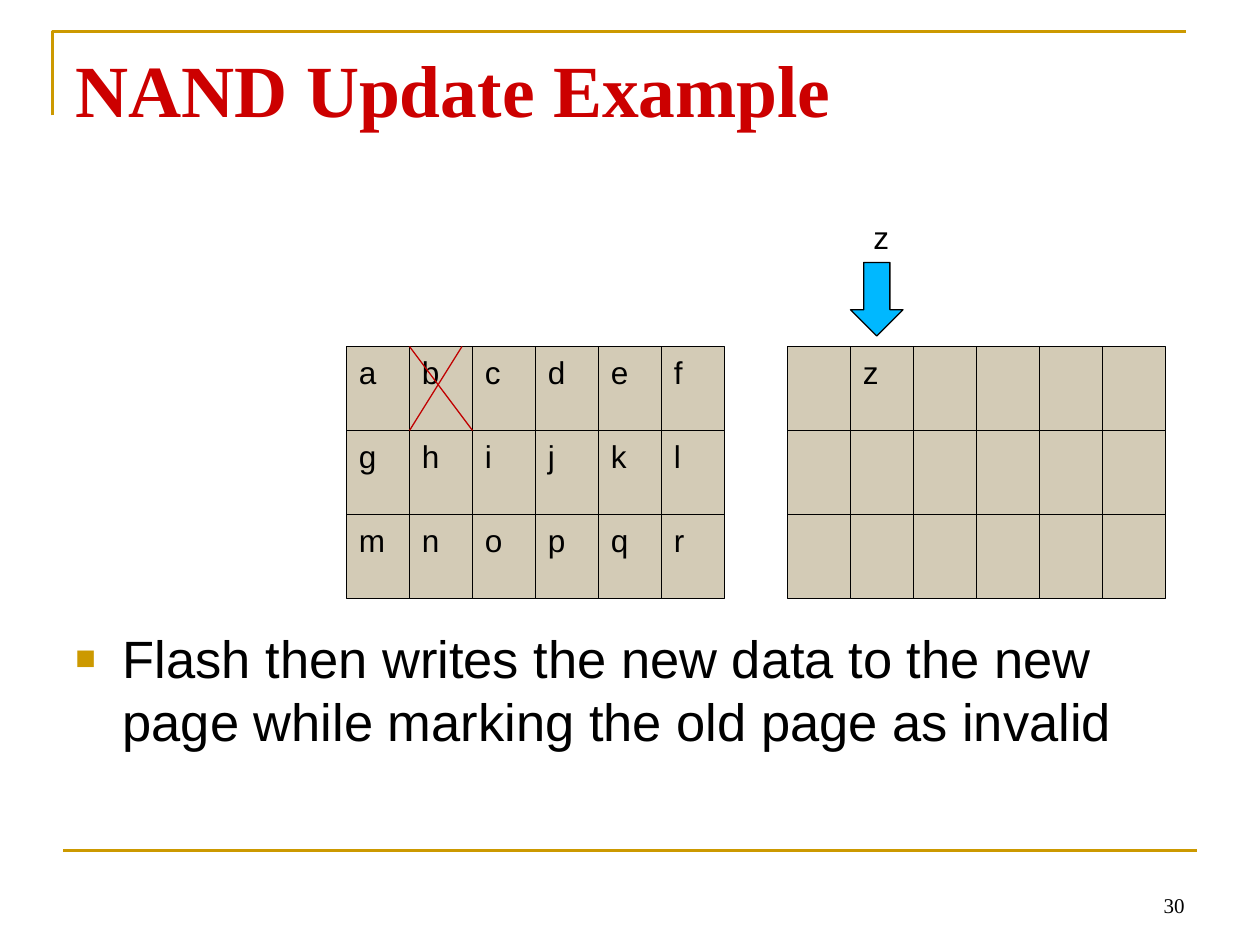
from dataclasses import dataclass

from lxml.etree import SubElement
from pptx import Presentation
from pptx.dml.color import RGBColor as Color
from pptx.enum.shapes import MSO_CONNECTOR as Connector, MSO_SHAPE as Shape
from pptx.enum.text import MSO_ANCHOR as Anchor, PP_ALIGN as Align
from pptx.oxml.ns import qn
from pptx.util import Pt


@dataclass(frozen=True)
class Theme:
    gold: Color = Color(0xCC, 0x99, 0x00)
    title_red: Color = Color(0xCC, 0x00, 0x00)
    cross_red: Color = Color(0xC0, 0x00, 0x00)
    cell_fill: Color = Color(0xD3, 0xCB, 0xB6)
    arrow_fill: Color = Color(0x00, 0xB8, 0xFF)
    black: Color = Color(0, 0, 0)
    serif: str = "Times New Roman"
    sans: str = "Arial"
    title_size: int = 42
    body_size: int = 30
    cell_size: int = 18
    number_size: int = 12
    rule_width: float = 1.5
    thin_width: float = 0.75


theme = Theme()
deck = Presentation()
deck.slide_width, deck.slide_height = Pt(720), Pt(540)
page = deck.slides.add_slide(deck.slide_layouts[6])


def write(shape, text, size, font=theme.sans, color=theme.black,
          align=Align.LEFT, anchor=Anchor.TOP):
    frame = shape.text_frame
    frame.word_wrap = True
    frame.vertical_anchor = anchor
    para = frame.paragraphs[0]
    para.text = text
    para.alignment = align
    para.font.name = font
    para.font.size = Pt(size)
    para.font.color.rgb = color
    return para


def add_line(x1, y1, x2, y2, color, width):
    line = page.shapes.add_connector(
        Connector.STRAIGHT, Pt(x1), Pt(y1), Pt(x2), Pt(y2))
    line.line.color.rgb = color
    line.line.width = Pt(width)
    SubElement(line.element.spPr, qn("a:effectLst"))


# Corner frame and bottom rule
builder = page.shapes.build_freeform(Pt(30), Pt(66))
builder.add_line_segments([(Pt(30), Pt(18)), (Pt(678), Pt(18))], close=False)
corner = builder.convert_to_shape()
corner.shadow.inherit = False
corner.fill.background()
corner.line.color.rgb = theme.gold
corner.line.width = Pt(theme.rule_width)
add_line(36, 486, 684, 486, theme.gold, theme.rule_width)

# Title and slide number
title = page.shapes.add_textbox(Pt(36), Pt(21.6), Pt(648), Pt(108))
write(title, "NAND Update Example", theme.title_size, theme.serif,
      theme.title_red).font.bold = True
number = page.shapes.add_textbox(Pt(516), Pt(492), Pt(168), Pt(36))
write(number, "30", theme.number_size, theme.serif,
      align=Align.RIGHT, anchor=Anchor.BOTTOM)

# Bulleted statement
body = page.shapes.add_textbox(Pt(36), Pt(354), Pt(648), Pt(129))
para = body.text_frame.paragraphs[0]
props = para._p.get_or_add_pPr()
props.set("marL", str(Pt(27)))
props.set("indent", str(Pt(-27)))
bullet_color = SubElement(props, qn("a:buClr"))
SubElement(bullet_color, qn("a:srgbClr"), val=str(theme.gold))
SubElement(props, qn("a:buSzPct"), val="65000")
SubElement(props, qn("a:buFont"), typeface=theme.sans)
SubElement(props, qn("a:buChar"), char="■")
write(body, "Flash then writes the new data to the new page while marking "
            "the old page as invalid", theme.body_size)

# New data arriving
arrow = page.shapes.add_shape(
    Shape.RIGHT_ARROW, Pt(480), Pt(156), Pt(42), Pt(30))
arrow.rotation = 90
arrow.shadow.inherit = False
arrow.fill.solid()
arrow.fill.fore_color.rgb = theme.arrow_fill
arrow.line.color.rgb = theme.black
arrow.line.width = Pt(theme.thin_width)
label = page.shapes.add_textbox(Pt(492), Pt(121), Pt(36), Pt(29))
write(label, "z", theme.cell_size)

# Old and new flash blocks, one cell per page
cell_width, cell_height, top = 36, 48, 198
old_left, new_left = 198, 450
blocks = [
    (old_left, ["abcdef", "ghijkl", "mnopqr"]),
    (new_left, [" z    ", "      ", "      "]),
]
for left, rows in blocks:
    for row, letters in enumerate(rows):
        for column, letter in enumerate(letters):
            cell = page.shapes.add_shape(
                Shape.RECTANGLE,
                Pt(left + column * cell_width), Pt(top + row * cell_height),
                Pt(cell_width), Pt(cell_height))
            cell.shadow.inherit = False
            cell.fill.solid()
            cell.fill.fore_color.rgb = theme.cell_fill
            cell.line.color.rgb = theme.black
            cell.line.width = Pt(theme.thin_width)
            if letter != " ":
                write(cell, letter, theme.cell_size)

# Cross over the invalid page
cross_left, cross_bottom = old_left + cell_width, top + cell_height
for start, end in [(0, cell_width), (30, 0)]:
    add_line(cross_left + start, top, cross_left + end, cross_bottom,
             theme.cross_red, theme.thin_width)

deck.save("out.pptx")
